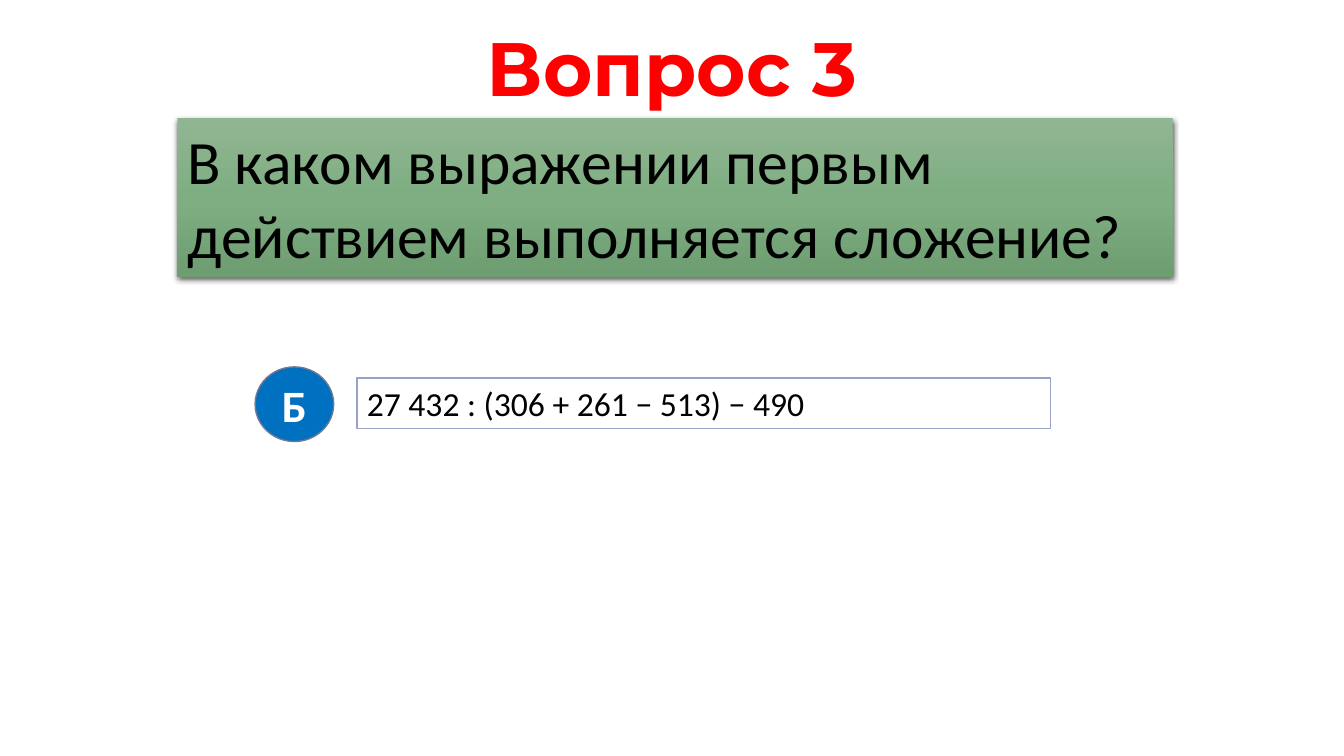
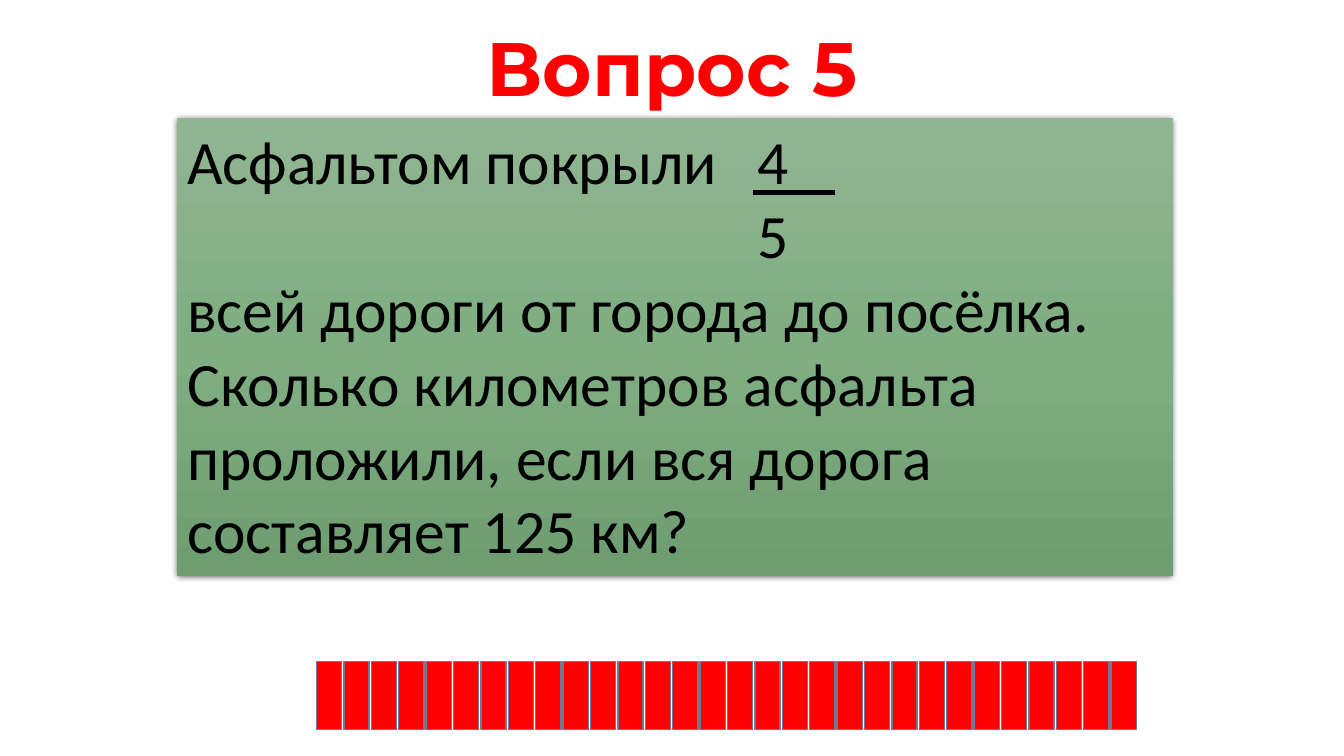
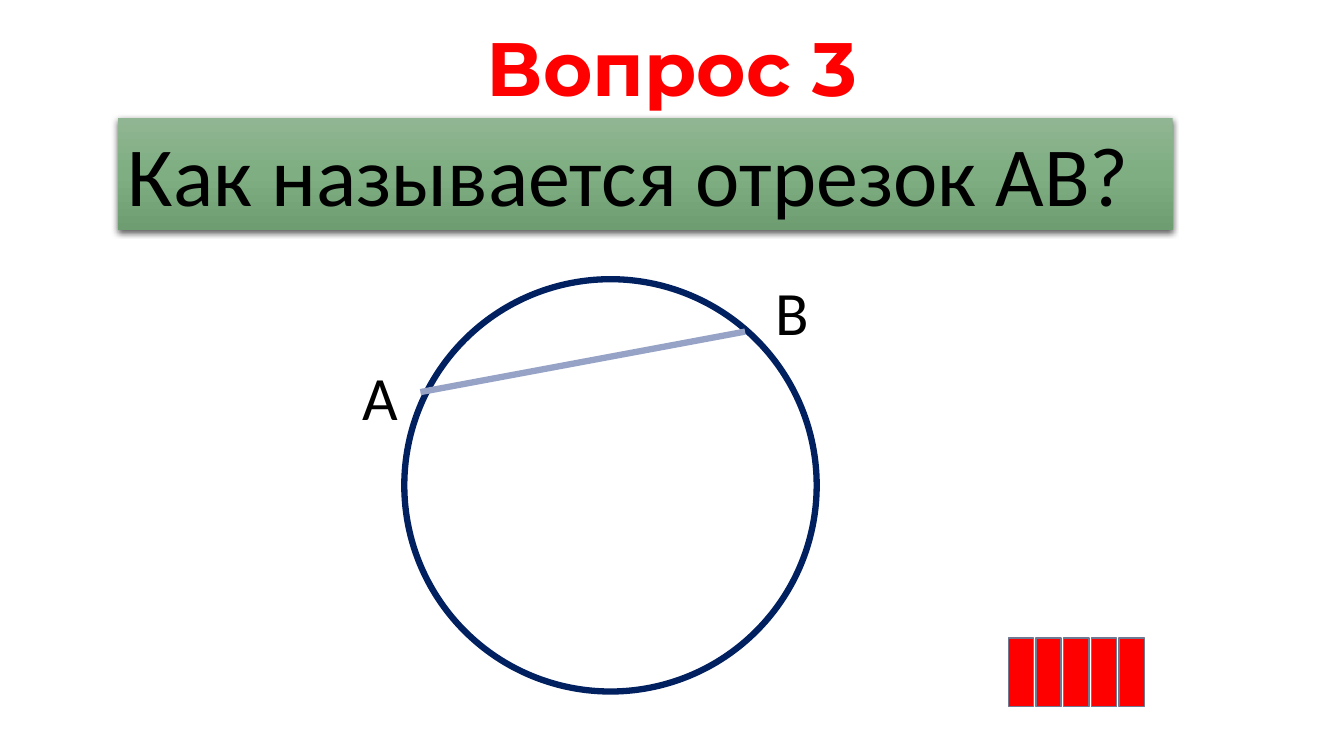
from lxml.etree import SubElement
from pptx import Presentation
from pptx.dml.color import RGBColor
from pptx.enum.shapes import MSO_CONNECTOR, MSO_SHAPE
from pptx.enum.text import MSO_ANCHOR, MSO_AUTO_SIZE, PP_ALIGN
from pptx.oxml.ns import qn
from pptx.util import Inches, Pt

WHITE = RGBColor(0xFF, 0xFF, 0xFF)
BLACK = RGBColor(0x00, 0x00, 0x00)
RED = RGBColor(0xFF, 0x00, 0x00)
BLUE = RGBColor(0x00, 0x70, 0xC0)
NAVY = RGBColor(0x00, 0x20, 0x60)
SLATE = RGBColor(0x6F, 0x79, 0x92)
LAVENDER = RGBColor(0x96, 0xA3, 0xC6)
GREEN_LIGHT = RGBColor(0x90, 0xB5, 0x92)
GREEN = RGBColor(0x7F, 0xAE, 0x82)
GREEN_DARK = RGBColor(0x6E, 0x9D, 0x72)


class Quiz:
    title_font = {"name": "Montserrat", "size": Pt(54), "bold": True}
    text_font = {"name": "Calibri", "size": Pt(44), "bold": False}
    panel_stops = ((0, GREEN_LIGHT), (50, GREEN), (100, GREEN_DARK))
    panel_top = 1.17
    panel_right = 11.63

    def __init__(self):
        self.deck = Presentation()
        self.deck.slide_width = Inches(13.33)
        self.deck.slide_height = Inches(7.5)
        self.page = None

    def question(self, title):
        self.page = self.deck.slides.add_slide(self.deck.slide_layouts[6])
        box = self.label(4.65, 0.16, 4.03, 1.01, title, color=RED,
                         align=PP_ALIGN.CENTER, wrap=False, **self.title_font)
        span = box.text_frame.paragraphs[0].runs[0]
        properties = span._r.get_or_add_rPr()
        outline = SubElement(properties, qn("a:ln"), w=str(Pt(0.75)))
        fill = SubElement(outline, qn("a:solidFill"))
        SubElement(fill, qn("a:srgbClr"), val=str(WHITE))
        properties.insert(0, outline)

    def set_text(self, box, text, color=BLACK, align=PP_ALIGN.LEFT, wrap=True,
                 anchor=MSO_ANCHOR.TOP, grow=True, **font):
        frame = box.text_frame
        frame.text = text
        frame.word_wrap = wrap
        frame.vertical_anchor = anchor
        frame.auto_size = MSO_AUTO_SIZE.SHAPE_TO_FIT_TEXT if grow else MSO_AUTO_SIZE.NONE
        for para in frame.paragraphs:
            para.alignment = align
            for span in para.runs:
                for name, value in {**self.text_font, **font}.items():
                    setattr(span.font, name, value)
                span.font.color.rgb = color

    def label(self, left, top, width, height, text, **style):
        box = self.page.shapes.add_textbox(
            Inches(left), Inches(top), Inches(width), Inches(height))
        self.set_text(box, text, **style)
        return box

    def shape(self, kind, left, top, width, height, fill=None, line=None, weight=1):
        shape = self.page.shapes.add_shape(
            kind, Inches(left), Inches(top), Inches(width), Inches(height))
        shape.shadow.inherit = False
        if fill is not None:
            shape.fill.solid()
            shape.fill.fore_color.rgb = fill
        if line is None:
            shape.line.fill.background()
        else:
            shape.line.color.rgb = line
            shape.line.width = Pt(weight)
        return shape

    def panel(self, left, height, text, tab=None, **style):
        box = self.shape(MSO_SHAPE.RECTANGLE, left, self.panel_top,
                         self.panel_right - left, height)
        box.fill.gradient()
        box.fill.gradient_angle = 270
        properties = box._element.spPr
        stops = properties.find(qn("a:gradFill")).find(qn("a:gsLst"))
        for stop in list(stops):
            stops.remove(stop)
        for position, color in self.panel_stops:
            stop = SubElement(stops, qn("a:gs"), pos=str(position * 1000))
            SubElement(stop, qn("a:srgbClr"), val=str(color))
        shadow = SubElement(properties.find(qn("a:effectLst")), qn("a:outerShdw"),
                            blurRad=str(Pt(4.5)), dist=str(Pt(1.5)),
                            dir="5400000", algn="ctr", rotWithShape="0")
        tint = SubElement(shadow, qn("a:srgbClr"), val=str(BLACK))
        SubElement(tint, qn("a:alpha"), val="63000")
        self.set_text(box, text, **style)
        if tab is not None:
            for para in box.text_frame.paragraphs:
                tabs = SubElement(para._p.get_or_add_pPr(), qn("a:tabLst"))
                SubElement(tabs, qn("a:tab"), pos=str(Inches(tab)), algn="l")

    def answer(self, letter, text):
        badge = self.shape(MSO_SHAPE.OVAL, 2.53, 3.64, 0.78, 0.74, BLUE, SLATE)
        self.set_text(badge, letter, color=WHITE, align=PP_ALIGN.CENTER,
                      anchor=MSO_ANCHOR.MIDDLE, grow=False, size=Pt(32), bold=True)
        box = self.shape(MSO_SHAPE.RECTANGLE, 3.54, 3.75, 6.88, 0.5, WHITE, LAVENDER)
        self.set_text(box, text, size=Pt(24))

    def timer(self, first, last, top, count):
        step = (last - first) / (count - 1)
        for index in range(count):
            self.shape(MSO_SHAPE.RECTANGLE, first + index * step, top,
                       0.25, 0.68, RED, SLATE)

    def segment(self, start, end, color, weight):
        points = [Inches(value) for value in (*start, *end)]
        line = self.page.shapes.add_connector(MSO_CONNECTOR.STRAIGHT, *points)
        line.line.color.rgb = color
        line.line.width = Pt(weight)
        SubElement(line._element.spPr, qn("a:effectLst"))


def main():
    quiz = Quiz()

    quiz.question("Вопрос 3")
    quiz.panel(1.76, 1.58, "В каком выражении первым действием выполняется сложение?")
    quiz.answer("Б", "27 432 : (306 + 261 − 513) − 490")

    quiz.question("Вопрос 5")
    quiz.panel(1.76, 4.54,
               "Асфальтом покрыли\t4\n\t5\n"
               "всей дороги от города до посёлка. Сколько километров асфальта "
               "проложили, если вся дорога составляет 125 км?", tab=5.66)
    quiz.timer(3.14, 11.02, 6.56, 30)
    quiz.segment((7.47, 1.91), (8.28, 1.91), BLACK, 3)

    quiz.question("Вопрос 3")
    quiz.panel(1.17, 1.11, "Как называется отрезок АВ?", size=Pt(60))
    quiz.timer(10, 11.1, 6.33, 5)
    quiz.shape(MSO_SHAPE.OVAL, 4.01, 2.77, 4.09, 4.09, WHITE, NAVY, 4.5)
    quiz.segment((4.17, 3.89), (7.39, 3.29), LAVENDER, 4.5)
    for letter, left, top in (("А", 3.5, 3.51), ("В", 7.59, 2.67)):
        quiz.label(left, top, 0.67, 0.84, letter)

    quiz.deck.save("out.pptx")


if __name__ == "__main__":
    main()
